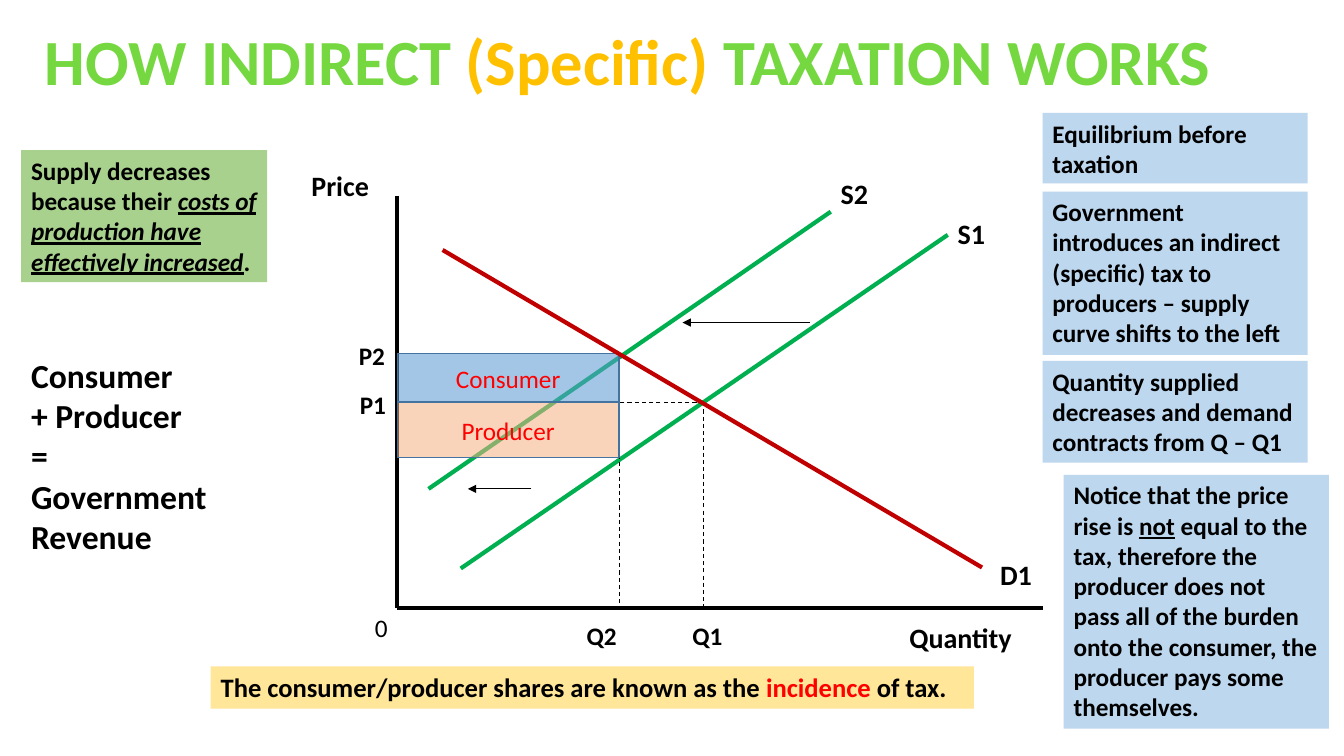
from lxml import etree
from pptx import Presentation
from pptx.dml.color import RGBColor
from pptx.enum.dml import MSO_LINE
from pptx.enum.shapes import MSO_CONNECTOR, MSO_SHAPE
from pptx.enum.text import MSO_ANCHOR, MSO_AUTO_SIZE, PP_ALIGN
from pptx.oxml.ns import qn
from pptx.util import Pt

PX = 9144
BLACK = RGBColor(0x00, 0x00, 0x00)
RED = RGBColor(0xFF, 0x00, 0x00)
DARK_RED = RGBColor(0xC0, 0x00, 0x00)
SUPPLY_GREEN = RGBColor(0x00, 0xB0, 0x50)
TITLE_GREEN = RGBColor(0x75, 0xD8, 0x40)
TITLE_GOLD = RGBColor(0xFF, 0xC0, 0x00)
NOTE_BLUE = RGBColor(0xBD, 0xD7, 0xEE)
NOTE_GREEN = RGBColor(0xA9, 0xD1, 0x8E)
NOTE_YELLOW = RGBColor(0xFF, 0xE6, 0x99)
CONSUMER_BLUE = RGBColor(0x5B, 0x9B, 0xD5)
PRODUCER_ORANGE = RGBColor(0xF4, 0xB1, 0x83)
AREA_OUTLINE = RGBColor(0x43, 0x73, 0x9E)
DASH, DASH_DOT = MSO_LINE.DASH, MSO_LINE.DASH_DOT
STRAIGHT, RECTANGLE = MSO_CONNECTOR.STRAIGHT, MSO_SHAPE.RECTANGLE
LEFT, CENTER = PP_ALIGN.LEFT, PP_ALIGN.CENTER
TOP, MIDDLE = MSO_ANCHOR.TOP, MSO_ANCHOR.MIDDLE
GROW, FIXED = MSO_AUTO_SIZE.SHAPE_TO_FIT_TEXT, MSO_AUTO_SIZE.NONE


def emu(lengths):
    return [length * PX for length in lengths]


def write(shape, runs, size, bold=True, align=LEFT, anchor=TOP, fit=GROW):
    frame = shape.text_frame
    frame_format = {"word_wrap": True, "auto_size": fit, "vertical_anchor": anchor}
    for name, value in frame_format.items():
        setattr(frame, name, value)
    paragraph = frame.paragraphs[0]
    paragraph.alignment = align
    for text, color, extra in runs:
        font_format = {"name": "Calibri", "size": Pt(size), "bold": bold, **extra}
        for index, line in enumerate(text.split("\n")):
            if index:
                paragraph.add_line_break()
            run = paragraph.add_run()
            run.text = line
            for name, value in font_format.items():
                setattr(run.font, name, value)
            run.font.color.rgb = color


def add_label(slide, box, runs, size, **layout):
    write(slide.shapes.add_textbox(*emu(box)), runs, size, **layout)


def add_panel(slide, box, color):
    shape = slide.shapes.add_shape(RECTANGLE, *emu(box))
    shape.shadow.inherit = False
    shape.fill.solid()
    shape.fill.fore_color.rgb = color
    shape.line.fill.background()
    return shape


def add_note(slide, box, color, runs, size=18):
    write(add_panel(slide, box, color), runs, size)


def add_tax_area(slide, box, name, color, opacity):
    shape = add_panel(slide, box, color)
    shape.line.color.rgb = AREA_OUTLINE
    shape.line.width = Pt(1)
    fill_color = shape.fill._xPr.find(qn("a:solidFill"))[0]
    etree.SubElement(fill_color, qn("a:alpha"), val=str(opacity * 1000))
    write(shape, [(name, RED, {})], 18, bold=False,
          align=CENTER, anchor=MIDDLE, fit=FIXED)


def add_line(slide, origin, points, color=BLACK, width=0.75, dash=None, arrow=False):
    left, top = origin
    x1, y1, x2, y2 = points
    ends = emu((left + x1, top + y1, left + x2, top + y2))
    connector = slide.shapes.add_connector(STRAIGHT, *ends)
    line = connector.line
    line.color.rgb = color
    for name, value in {"width": Pt(width), "dash_style": dash}.items():
        setattr(line, name, value)
    if arrow:
        etree.SubElement(line._get_or_add_ln(), qn("a:tailEnd"), type="triangle")
    etree.SubElement(connector._element.spPr, qn("a:effectLst"))


def add_diagram(slide, box):
    left, top, width, height = box
    axis, base = 95, 441
    q2, q1 = 315, 399
    p2, p1, producer_price = 189, 237, 292

    for points in ((axis, 32, axis, base), (axis, base, width, base)):
        add_line(slide, (left, top), points, width=3)
    for points in ((158, 402, 641, 71), (525, 48, 126, 323)):
        add_line(slide, (left, top), points, SUPPLY_GREEN, 3)
    for points, dash in (
        ((q1, p1, axis, p1), DASH),
        ((q1, p1, q1, base), DASH),
        ((q2, p2, q2, base), DASH),
        ((q2, p2, axis, p2), DASH_DOT),
        ((q2, producer_price, axis, producer_price), DASH_DOT),
    ):
        add_line(slide, (left, top), points, dash=dash)
    for points in ((504, 158, 378, 158), (228, 323, 165, 323)):
        add_line(slide, (left, top), points, arrow=True)

    for text, x, y, label_width, size in (
        ("Price", 0, 0, 147, 20),
        ("Quantity", 593, 449, 158, 20),
        ("D1", 683, 386, 105, 20),
        ("S1", 641, 48, 126, 20),
        ("S2", 525, 8, 84, 20),
        ("P1", 48, 219, 52, 18),
        ("P2", 47, 171, 58, 18),
        ("Q1", 378, 449, 74, 18),
        ("Q2", 273, 449, 74, 18),
        ("0", 63, base, 116, 18),
    ):
        label_box = (left + x, top + y, label_width, size * 2 + 4)
        add_label(slide, label_box, [(text, BLACK, {})], size, bold=text != "0")

    for name, upper, lower, color, opacity in (
        ("Producer", p1, producer_price, PRODUCER_ORANGE, 54),
        ("Consumer", p2, p1, CONSUMER_BLUE, 56),
    ):
        area = (left + axis, top + upper, q2 - axis, lower - upper)
        add_tax_area(slide, area, name, color, opacity)
    add_line(slide, (left, top), (140, 86, 675, 401), DARK_RED, 3)


def add_title(slide, box):
    add_label(slide, box, [
        ("HOW INDIRECT ", TITLE_GREEN, {}),
        ("(Specific) ", TITLE_GOLD, {}),
        ("TAXATION WORKS", TITLE_GREEN, {}),
    ], 46, align=CENTER)


def add_left_column(slide, box):
    left, top, width, height = box
    add_note(slide, (left, top, 244, 131), NOTE_GREEN, [
        ("Supply decreases because their ", BLACK, {}),
        ("costs of production have effectively increased", BLACK,
         {"italic": True, "underline": True}),
        (".", BLACK, {}),
    ])
    add_label(slide, (left, top + 198, width, height - 198), [
        ("Consumer \n+ Producer \n= \nGovernment Revenue", BLACK, {}),
    ], 24)


def add_right_column(slide, box):
    left, top, width, height = box
    for y, note_height, text in (
        (0, 70, "Equilibrium before taxation"),
        (78, 162, "Government introduces an indirect (specific) tax to producers "
                  "– supply curve shifts to the left"),
        (246, 101, "Quantity supplied decreases and demand contracts from Q – Q1"),
    ):
        add_note(slide, (left, top + y, width, note_height), NOTE_BLUE,
                 [(text, BLACK, {})])
    add_note(slide, (left + 21, top + 359, width, height - 359), NOTE_BLUE, [
        ("Notice that the price rise is ", BLACK, {}),
        ("not", BLACK, {"underline": True}),
        (" equal to the\ntax, therefore the\nproducer does not\n"
         "pass all of the burden\nonto the consumer, the producer pays some themselves.",
         BLACK, {}),
    ])


def add_conclusion(slide, box):
    add_note(slide, box, NOTE_YELLOW, [
        ("The consumer/producer shares are known as the ", BLACK, {}),
        ("incidence", RED, {}),
        (" of tax.", BLACK, {}),
    ], 19)


def main():
    presentation = Presentation()
    presentation.slide_width, presentation.slide_height = emu((1333, 750))
    slide = presentation.slides.add_slide(presentation.slide_layouts[6])
    add_diagram(slide, (299, 162, 735, 489))
    add_left_column(slide, (21, 149, 263, 410))
    add_right_column(slide, (1034, 112, 263, 611))
    add_title(slide, (34, 16, 1177, 88))
    add_conclusion(slide, (209, 661, 757, 42))
    presentation.save("out.pptx")


if __name__ == "__main__":
    main()
